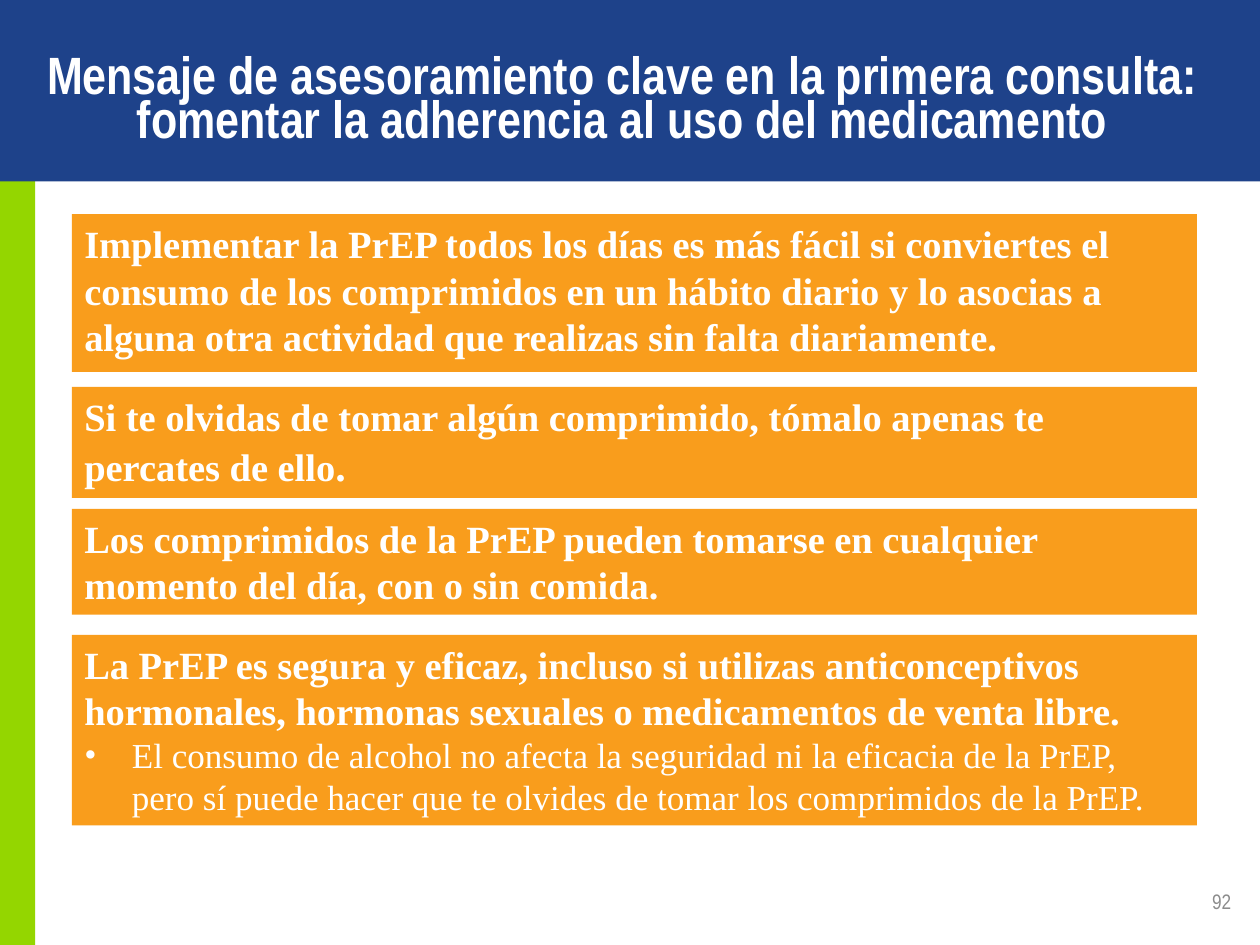
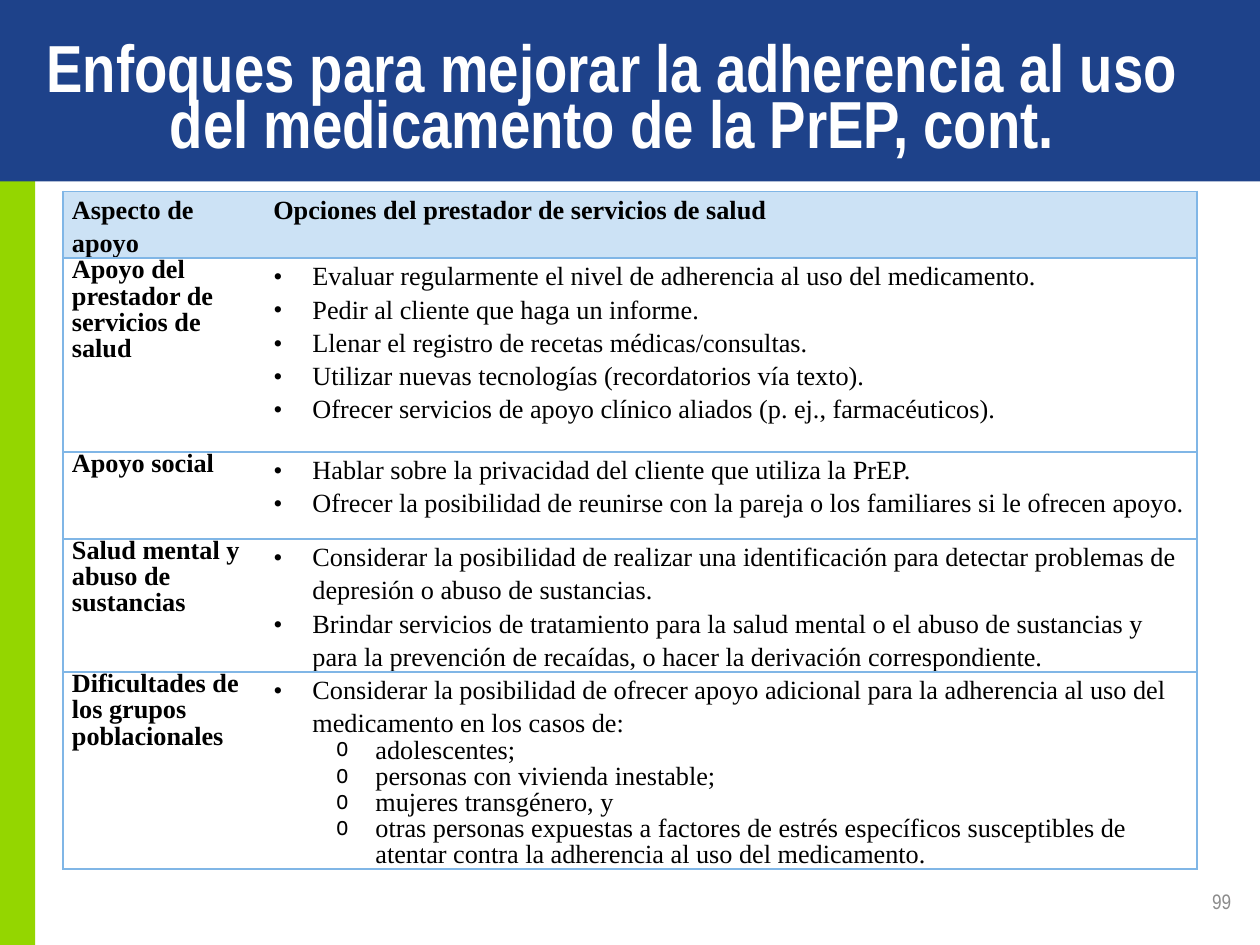
"""Build two slides on counselling and support for PrEP adherence."""
from dataclasses import dataclass

from lxml.etree import SubElement
from pptx import Presentation
from pptx.dml.color import RGBColor
from pptx.enum.shapes import MSO_SHAPE
from pptx.enum.text import MSO_ANCHOR, MSO_AUTO_SIZE, PP_ALIGN
from pptx.oxml.ns import qn
from pptx.util import Cm, Pt


@dataclass(frozen=True)
class Theme:
    blue: str = "1E428A"
    green: str = "94D600"
    orange: str = "F99D1C"
    white: str = "FFFFFF"
    black: str = "000000"
    gray: str = "8C8C8C"
    header: str = "CCE2F5"
    border: str = "80B6E6"
    heading_font: str = "Arial Narrow"
    body_font: str = "Times New Roman"
    message_size: int = 22
    detail_size: int = 20
    period_size: int = 24
    table_size: int = 15
    number_size: int = 12


theme = Theme()


def add_run(paragraph, text, size, color, name=theme.body_font, bold=False):
    """Append a formatted run to a paragraph."""
    run = paragraph.add_run()
    run.text = text
    values = {"size": Pt(size), "name": name, "bold": bold}
    for attribute, value in values.items():
        setattr(run.font, attribute, value)
    run.font.color.rgb = RGBColor.from_string(color)


def set_bullet(paragraph, character, left, hanging, font):
    """Give a paragraph a bullet with a hanging indent."""
    properties = paragraph._p.get_or_add_pPr()
    properties.set("marL", str(Cm(left)))
    properties.set("indent", str(-Cm(hanging)))
    SubElement(properties, qn("a:buFont"), typeface=font)
    SubElement(properties, qn("a:buChar"), char=character)


presentation = Presentation()
presentation.slide_width, presentation.slide_height = Cm(25.4), Cm(19.05)
layout = presentation.slide_layouts[5]

titles = [
    (0, 25.1, 30, "92", ["Mensaje de asesoramiento clave en la primera consulta:",
                         "fomentar la adherencia al uso del medicamento"]),
    (0.56, 23.57, 38, "99", ["Enfoques para mejorar la adherencia al uso del medicamento de la PrEP, cont."]),
]
for left, width, size, number, lines in titles:
    slide = presentation.slides.add_slide(layout)
    title = slide.shapes.title
    place = {"left": Cm(left), "top": Cm(0.89), "width": Cm(width), "height": Cm(2.39)}
    for attribute, value in place.items():
        setattr(title, attribute, value)
    number_box = slide.shapes.add_textbox(Cm(19.15), Cm(17.65), Cm(5.92), Cm(1.02))
    for shape in (title, number_box):
        frame_values = {"word_wrap": True, "auto_size": MSO_AUTO_SIZE.NONE, "vertical_anchor": MSO_ANCHOR.MIDDLE}
        for attribute, value in frame_values.items():
            setattr(shape.text_frame, attribute, value)
    for index, line in enumerate(lines):
        paragraph = title.text_frame.add_paragraph() if index else title.text_frame.paragraphs[0]
        paragraph.alignment = PP_ALIGN.CENTER
        paragraph.line_spacing = 0.7
        add_run(paragraph, line, size, theme.white, theme.heading_font, True)
    paragraph = number_box.text_frame.paragraphs[0]
    paragraph.alignment = PP_ALIGN.RIGHT
    add_run(paragraph, number, theme.number_size, theme.gray, theme.heading_font)

message_slide, table_slide = presentation.slides

bands = [(0, 25.4, 3.66, theme.blue), (3.33, 0.71, 15.72, theme.green)]
for top, width, height, color in bands:
    band = message_slide.shapes.add_shape(MSO_SHAPE.RECTANGLE, 0, Cm(top), Cm(width), Cm(height))
    band.shadow.inherit = False
    band.fill.solid()
    band.fill.fore_color.rgb = RGBColor.from_string(color)
    band.line.fill.background()
    layout.shapes.element.insert(2, band.element)

messages = [
    (4.32, 3.18, "Implementar la PrEP todos los días es más fácil si conviertes el consumo de los "
                 "comprimidos en un hábito diario y lo asocias a alguna otra actividad que realizas "
                 "sin falta diariamente."),
    (7.8, 2.24, "Si te olvidas de tomar algún comprimido, tómalo apenas te percates de ello"),
    (10.26, 2.13, "Los comprimidos de la PrEP pueden tomarse en cualquier momento del día, con o sin comida."),
    (12.8, 3.84, "La PrEP es segura y eficaz, incluso si utilizas anticonceptivos hormonales, "
                 "hormonas sexuales o medicamentos de venta libre."),
]
message_frames = []
for top, height, text in messages:
    box = message_slide.shapes.add_shape(MSO_SHAPE.RECTANGLE, Cm(1.45), Cm(top), Cm(22.68), Cm(height))
    box.shadow.inherit = False
    box.fill.solid()
    box.fill.fore_color.rgb = RGBColor.from_string(theme.orange)
    box.line.fill.background()
    frame_values = {"word_wrap": True, "auto_size": MSO_AUTO_SIZE.SHAPE_TO_FIT_TEXT, "vertical_anchor": MSO_ANCHOR.TOP}
    for attribute, value in frame_values.items():
        setattr(box.text_frame, attribute, value)
    paragraph = box.text_frame.paragraphs[0]
    paragraph.alignment = PP_ALIGN.LEFT
    add_run(paragraph, text, theme.message_size, theme.white, bold=True)
    message_frames.append(box.text_frame)

add_run(message_frames[1].paragraphs[0], ".", theme.period_size, theme.white, bold=True)
alcohol = message_frames[3].add_paragraph()
alcohol.alignment = PP_ALIGN.LEFT
set_bullet(alcohol, "•", 0.96, 0.96, theme.body_font)
add_run(alcohol, "El consumo de alcohol no afecta la seguridad ni la eficacia de la PrEP, pero sí puede "
                 "hacer que te olvides de tomar los comprimidos de la PrEP.", theme.detail_size, theme.white)

support_rows = [
    (0.89, "Aspecto de apoyo", ["Opciones del prestador de servicios de salud"], []),
    (3.91, "Apoyo del prestador de servicios de salud", [
        "Evaluar regularmente el nivel de adherencia al uso del medicamento.",
        "Pedir al cliente que haga un informe.",
        "Llenar el registro de recetas médicas/consultas.",
        "Utilizar nuevas tecnologías (recordatorios vía texto).",
        "Ofrecer servicios de apoyo clínico aliados (p. ej., farmacéuticos)."], []),
    (1.75, "Apoyo social", [
        "Hablar sobre la privacidad del cliente que utiliza la PrEP.",
        "Ofrecer la posibilidad de reunirse con la pareja o los familiares si le ofrecen apoyo."], []),
    (2.41, "Salud mental y abuso de sustancias", [
        "Considerar la posibilidad de realizar una identificación para detectar problemas de "
        "depresión o abuso de sustancias.",
        "Brindar servicios de tratamiento para la salud mental o el abuso de sustancias y para la "
        "prevención de recaídas, o hacer la derivación correspondiente."], []),
    (3.86, "Dificultades de los grupos poblacionales", [
        "Considerar la posibilidad de ofrecer apoyo adicional para la adherencia al uso del "
        "medicamento en los casos de:"], [
        "adolescentes;",
        "personas con vivienda inestable;",
        "mujeres transgénero, y",
        "otras personas expuestas a factores de estrés específicos susceptibles de atentar contra "
        "la adherencia al uso del medicamento."]),
]
total_height = sum(row[0] for row in support_rows)
table = table_slide.shapes.add_table(len(support_rows), 2, Cm(1.27), Cm(3.86), Cm(22.86), Cm(total_height)).table
table.first_row = table.horz_banding = False
for column, width in zip(table.columns, (4.06, 18.8)):
    column.width = Cm(width)

for row_index, (height, aspect, options, groups) in enumerate(support_rows):
    table.rows[row_index].height = Cm(height)
    is_header = row_index == 0
    aspect_entries = [(aspect, 0)]
    option_entries = [(text, 0) for text in options] + [(text, 1) for text in groups]
    for column_index, entries in enumerate((aspect_entries, option_entries)):
        cell = table.cell(row_index, column_index)
        margins = {"margin_left": Cm(0.18), "margin_right": Cm(0.18), "margin_top": 0, "margin_bottom": 0}
        for attribute, value in margins.items():
            setattr(cell, attribute, value)
        inner_side = "R" if column_index == 0 else "L"
        for side in "LRTB":
            line = SubElement(cell._tc.get_or_add_tcPr(), qn(f"a:ln{side}"), w=str(Pt(1)))
            if side == inner_side:
                SubElement(line, qn("a:noFill"))
            else:
                SubElement(SubElement(line, qn("a:solidFill")), qn("a:srgbClr"), val=theme.border)
        cell.fill.solid()
        cell.fill.fore_color.rgb = RGBColor.from_string(theme.header if is_header else theme.white)
        for index, (text, level) in enumerate(entries):
            paragraph = cell.text_frame.add_paragraph() if index else cell.text_frame.paragraphs[0]
            is_option = column_index == 1 and not is_header
            paragraph.level = level
            paragraph.line_spacing = 1.15 if is_header or (is_option and level == 0) else 0.9
            if is_option and level == 0:
                set_bullet(paragraph, "•", 0.79, 0.79, theme.body_font)
            elif is_option:
                set_bullet(paragraph, "o", 2.06, 0.79, theme.heading_font)
            add_run(paragraph, text, theme.table_size, theme.black, bold=not is_option)

presentation.save("out.pptx")
